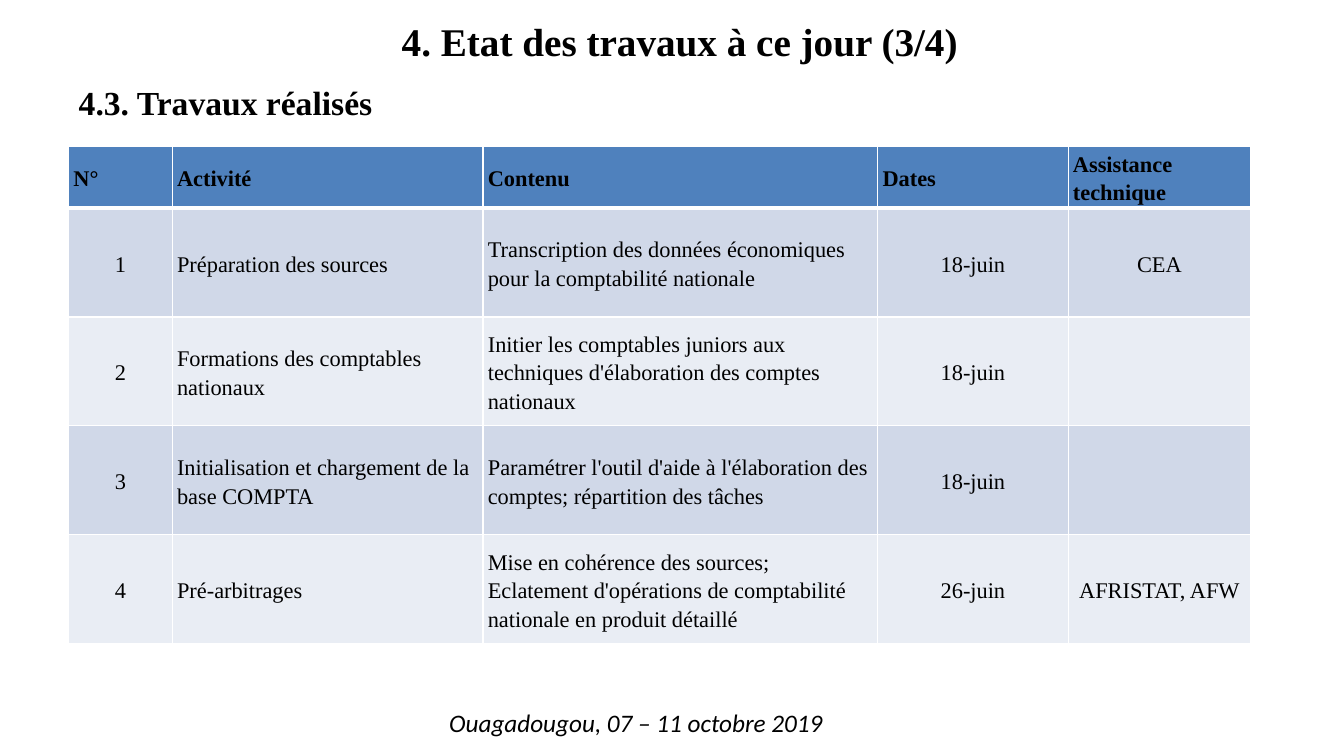
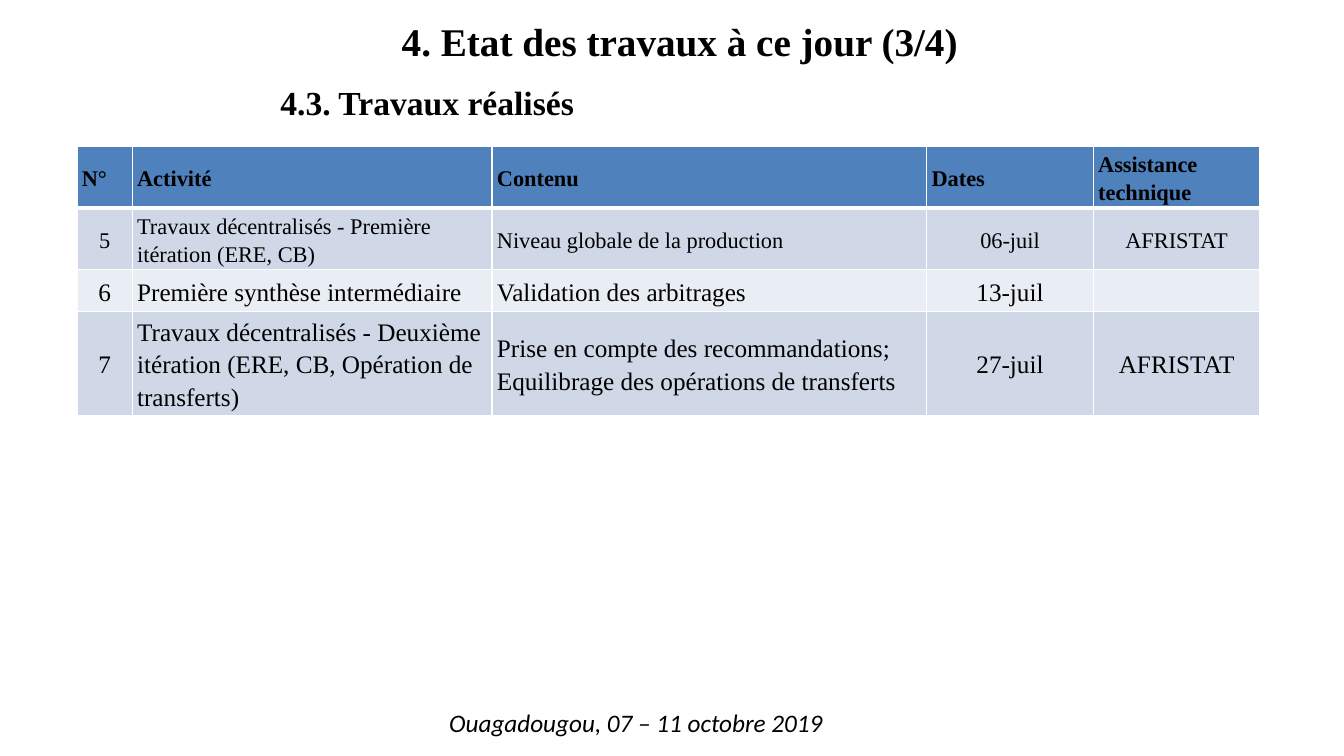
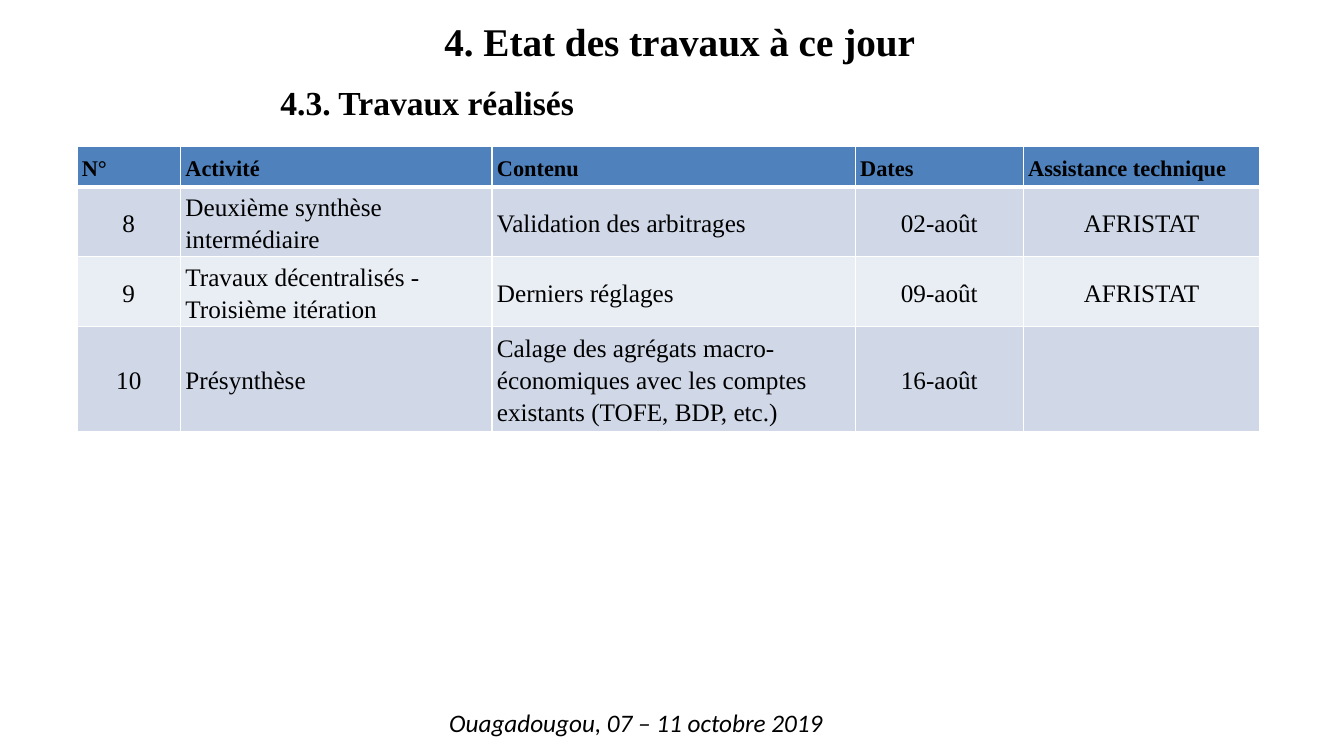
from lxml import etree
from pptx import Presentation
from pptx.dml.color import RGBColor
from pptx.enum.text import MSO_ANCHOR as ANCHOR, MSO_AUTO_SIZE as AUTO, PP_ALIGN as ALIGN
from pptx.oxml import parse_xml
from pptx.oxml.ns import nsdecls
from pptx.util import Pt

COLORS = {"text": "000000", "header": "4F81BD", "band_dark": "D0D8E8",
          "band_light": "E9EDF4", "border": "FFFFFF"}
SERIF, SANS = "Times New Roman", "Calibri"
HEADINGS = ["N°", "Activité", "Contenu", "Dates", "Assistance technique"]
COLUMN_ALIGN = [ALIGN.CENTER, ALIGN.LEFT, ALIGN.LEFT, ALIGN.CENTER, ALIGN.CENTER]
TABLE_TOP = 104.5


def rgb(name):
    return RGBColor.from_string(COLORS[name])


def write(tf, text, size=18, font=SERIF, bold=False, italic=False,
          align=ALIGN.LEFT, level=0, spacing=None):
    p = tf.paragraphs[0]
    p.alignment, p.level = align, level
    if spacing:
        p.line_spacing = spacing
    r = p.add_run()
    r.text = text
    f = r.font
    f.size, f.name, f.bold, f.italic = Pt(size), font, bold, italic
    f.color.rgb = rgb("text")


def add_borders(cell, top=1, bottom=1):
    tcPr = cell._tc.get_or_add_tcPr()
    for side, width in (("L", 1), ("R", 1), ("T", top), ("B", bottom)):
        ln = parse_xml(f'<a:ln{side} {nsdecls("a")} w="{Pt(width)}"/>')
        fill = etree.SubElement(ln, ln.tag.replace(f"ln{side}", "solidFill"))
        etree.SubElement(fill, ln.tag.replace(f"ln{side}", "srgbClr"), val=COLORS["border"])
        tcPr.append(ln)


class Deck:
    def __init__(self):
        self.prs = Presentation()
        self.prs.slide_width, self.prs.slide_height = Pt(960), Pt(540)

    def new_slide(self, title, subtitle, left, width, level):
        self.s = self.prs.slides.add_slide(self.prs.slide_layouts[0])
        self.placeholder(0, title, (179.5, 3.5, 612, 51), ANCHOR.MIDDLE,
                         size=28, bold=True, align=ALIGN.CENTER)
        self.placeholder(1, subtitle, (left, 55, width, 435.5), ANCHOR.TOP,
                         size=24, bold=True, level=level)
        self.footer("Ouagadougou, 07 – 11 octobre 2019")

    def placeholder(self, idx, text, box, anchor, **style):
        sp = self.s.placeholders[idx]
        sp.left, sp.top, sp.width, sp.height = map(Pt, box)
        tf = sp.text_frame
        tf.auto_size, tf.vertical_anchor = AUTO.NONE, anchor
        write(tf, text, **style)

    def footer(self, text):
        tf = self.s.shapes.add_textbox(Pt(312), Pt(502), Pt(284.5), Pt(29)).text_frame
        tf.word_wrap, tf.auto_size = False, AUTO.SHAPE_TO_FIT_TEXT
        write(tf, text, font=SANS, italic=True, align=ALIGN.CENTER)

    def table(self, left, widths, heights, rows, sizes):
        frame = self.s.shapes.add_table(len(rows) + 1, len(widths), Pt(left), Pt(TABLE_TOP),
                                        Pt(sum(widths)), Pt(sum(heights)))
        table = frame.table
        table.first_row = table.horz_banding = False
        for col, width in zip(table.columns, widths):
            col.width = Pt(width)
        for row, height in zip(table.rows, heights):
            row.height = Pt(height)
        for i, (texts, size) in enumerate(zip([HEADINGS] + rows, [16] + sizes)):
            color = "header" if i == 0 else "band_dark" if i % 2 else "band_light"
            for j, text in enumerate(texts):
                align = COLUMN_ALIGN[j] if i else ALIGN.LEFT
                self.cell(table.cell(i, j), text, color, top=3 if i == 1 else 1,
                          bottom=1 if i else 3, size=size, bold=i == 0, align=align)

    def cell(self, cell, text, color, top, bottom, **style):
        cell.margin_left = cell.margin_right = Pt(3.5)
        cell.margin_top = cell.margin_bottom = 0
        cell.vertical_anchor = ANCHOR.MIDDLE
        add_borders(cell, top, bottom)
        cell.fill.solid()
        cell.fill.fore_color.rgb = rgb(color)
        if text:
            write(cell.text_frame, text, spacing=1.15, **style)


def main():
    deck = Deck()
    title, subtitle = "4. Etat des travaux à ce jour", "4.3. Travaux réalisés"

    deck.new_slide(f"{title} (3/4)", subtitle, left=49, width=844.5, level=0)
    deck.table(49, [74, 222, 282, 136, 130.5], [44] + [77.8] * 4, [
        ["1", "Préparation des sources",
         "Transcription des données économiques pour la comptabilité nationale",
         "18-juin", "CEA"],
        ["2", "Formations des comptables nationaux",
         "Initier les comptables juniors aux techniques d'élaboration des comptes nationaux",
         "18-juin", ""],
        ["3", "Initialisation et chargement de la base COMPTA",
         "Paramétrer l'outil d'aide à l'élaboration des comptes; répartition des tâches",
         "18-juin", ""],
        ["4", "Pré-arbitrages",
         "Mise en cohérence des sources; Eclatement d'opérations de comptabilité "
         "nationale en produit détaillé",
         "26-juin", "AFRISTAT, AFW"],
    ], sizes=[16] * 4)

    deck.new_slide(f"{title} (3/4)", subtitle, left=157, width=657.5, level=1)
    deck.table(55, [39.5, 257, 310.5, 119, 119], [44, 44, 29.5, 74], [
        ["5", "Travaux décentralisés - Première itération (ERE, CB)",
         "Niveau globale de la production", "06-juil", "AFRISTAT"],
        ["6", "Première synthèse intermédiaire", "Validation des arbitrages", "13-juil", ""],
        ["7", "Travaux décentralisés - Deuxième itération (ERE, CB, Opération de transferts)",
         "Prise en compte des recommandations; Equilibrage des opérations de transferts",
         "27-juil", "AFRISTAT"],
    ], sizes=[16, 18, 18])

    deck.new_slide(title, subtitle, left=157, width=657.5, level=1)
    deck.table(55, [74, 222.5, 259.5, 120, 169], [29, 50, 50, 74], [
        ["8", "Deuxième synthèse intermédiaire", "Validation des arbitrages",
         "02-août", "AFRISTAT"],
        ["9", "Travaux décentralisés - Troisième itération", "Derniers réglages",
         "09-août", "AFRISTAT"],
        ["10", "Présynthèse",
         "Calage des agrégats macro-économiques avec les comptes existants (TOFE, BDP, etc.)",
         "16-août", ""],
    ], sizes=[18] * 3)

    deck.prs.save("out.pptx")


if __name__ == "__main__":
    main()
